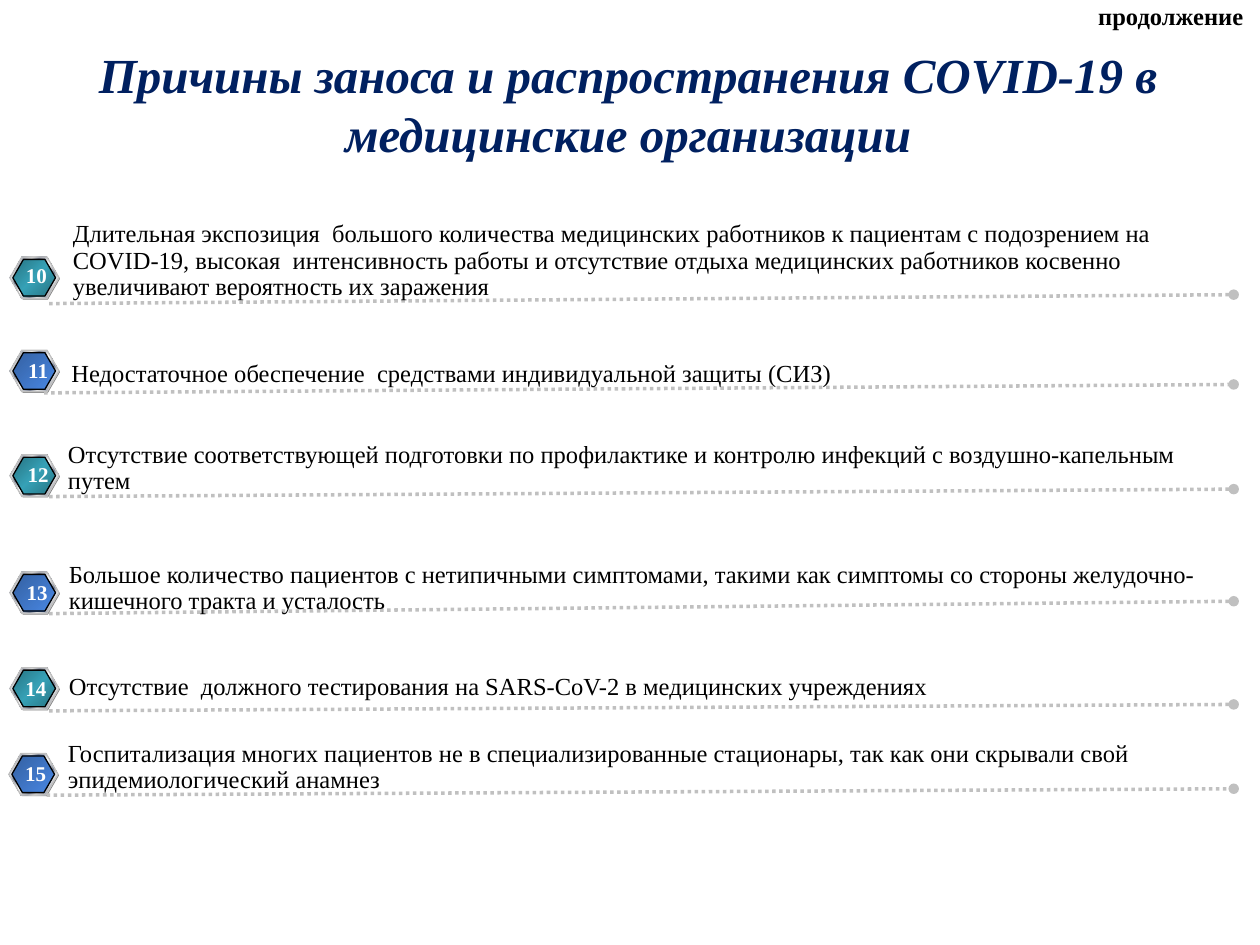
from lxml import etree
from pptx import Presentation
from pptx.dml.color import RGBColor
from pptx.enum import dml, shapes, text
from pptx.oxml import ns
from pptx.util import Cm, Pt

NAVY = RGBColor(0x00, 0x20, 0x60)
BLACK = RGBColor(0x00, 0x00, 0x00)
WHITE = RGBColor(0xFF, 0xFF, 0xFF)
GRAY = RGBColor(0x80, 0x80, 0x80)
SILVER = RGBColor(0xC0, 0xC0, 0xC0)
PALE = RGBColor(0xE6, 0xE6, 0xE6)
STEEL = RGBColor(0x7D, 0x84, 0x96)
TEAL = RGBColor(0x27, 0x73, 0x82)
AQUA = RGBColor(0x36, 0xA1, 0xB6)
BLUE = RGBColor(0x34, 0x61, 0xA2)
SKY = RGBColor(0x49, 0x87, 0xE3)

METAL = [(0, PALE), (7, STEEL), (26, PALE), (34, STEEL), (46, PALE), (50, WHITE),
         (54, PALE), (66, STEEL), (74, PALE), (93, STEEL), (100, PALE)]
FACES = [[(0, TEAL), (50, AQUA), (100, TEAL)], [(0, BLUE), (100, SKY)]]

ROWS = [
    ((0.2, 5.18), (0.25, 5.16, 0.97), (0.99, 6.12, 5.94), (1.22, 4.34, 22.35, 1.85),
     "Длительная экспозиция  большого количества медицинских работников к пациентам с подозрением на COVID-19, высокая  интенсивность работы и отсутствие отдыха медицинских работников косвенно увеличивают вероятность их заражения"),
    ((0.2, 7.06), (0.3, 7.09, 0.94), (0.89, 7.92, 7.75), (1.19, 7.16, 23.52, 0.79),
     "Недостаточное обеспечение  средствами индивидуальной защиты (СИЗ)"),
    ((0.2, 9.17), (0.15, 9.17, 1.24), (0.99, 10.01, 9.86), (1.12, 8.79, 24.05, 1.32),
     "Отсутствие соответствующей подготовки по профилактике и контролю инфекций с воздушно-капельным путем"),
    ((0.2, 11.53), (0.1, 11.56, 1.3), (0.99, 12.37, 12.12), (1.14, 11.2, 23.77, 1.32),
     "Большое количество пациентов с нетипичными симптомами, такими как симптомы со стороны желудочно-кишечного тракта и усталость"),
    ((0.2, 13.46), (0.23, 13.49, 0.99), (0.99, 14.33, 14.2), (1.14, 13.46, 23.77, 0.79),
     "Отсутствие  должного тестирования на SARS-CoV-2 в медицинских учреждениях"),
    ((0.18, 15.19), (0.1, 15.21, 1.24), (0.94, 16.03, 15.9), (1.12, 14.81, 23.77, 1.32),
     "Госпитализация многих пациентов не в специализированные стационары, так как они скрывали свой эпидемиологический анамнез"),
]

deck = Presentation()
deck.slide_width, deck.slide_height = Cm(25.4), Cm(19.05)
slide = deck.slides.add_slide(deck.slide_layouts[6])


def write(words, spot, size, color, bold=False, align=text.PP_ALIGN.LEFT, wrap=True):
    box = slide.shapes.add_textbox(*map(Cm, spot))
    frame = box.text_frame
    frame.text = words
    frame.word_wrap = wrap
    frame.auto_size = text.MSO_AUTO_SIZE.SHAPE_TO_FIT_TEXT
    para = frame.paragraphs[0]
    para.alignment = align
    font = para.runs[0].font
    font.name, font.size, font.bold = "Times New Roman", Pt(size), bold
    font.color.rgb = color
    return box


def hexa(group, spot, stops, edge):
    shape = group.shapes.add_shape(shapes.MSO_SHAPE.HEXAGON, *map(Cm, spot))
    shape.shadow.inherit = False
    shape.adjustments[0] = 0.289
    if edge is None:
        shape.fill.solid()
        shape.fill.fore_color.rgb = GRAY
        shape.line.fill.background()
        return
    shape.fill.gradient()
    grad = shape.fill._xPr.find(ns.qn("a:gradFill"))
    bands = grad.find(ns.qn("a:gsLst"))
    for old in list(bands):
        bands.remove(old)
    for place, color in stops:
        stop = etree.SubElement(bands, ns.qn("a:gs"), pos=str(place * 1000))
        etree.SubElement(stop, ns.qn("a:srgbClr"), val=str(color))
    shape.fill.gradient_angle = 315
    shape.line.color.rgb = edge
    shape.line.width = Pt(0.75)


title = write("Причины заноса и распространения COVID-19 в медицинские организации",
              (0.61, 1.3, 24.1, 1.57), 28, NAVY, True, text.PP_ALIGN.CENTER)
title.text_frame.auto_size = text.MSO_AUTO_SIZE.NONE
title.text_frame.vertical_anchor = text.MSO_ANCHOR.MIDDLE
title.text_frame.paragraphs[0].runs[0].font.italic = True

for i, (hub, num, rule, area, words) in enumerate(ROWS):
    x, y = hub
    badge = slide.shapes.add_group_shape()
    hexa(badge, (x + 0.02, y + 0.02, 0.99, 0.84), None, None)
    hexa(badge, (x, y, 0.99, 0.84), METAL, SILVER)
    hexa(badge, (x + 0.06, y + 0.05, 0.86, 0.74), FACES[i % 2], BLACK)

    left, start, end = rule
    line = slide.shapes.add_connector(shapes.MSO_CONNECTOR.STRAIGHT,
                                      Cm(left), Cm(start), Cm(24.87), Cm(end))
    line.line.color.rgb = SILVER
    line.line.width = Pt(2)
    line.line.dash_style = dml.MSO_LINE.ROUND_DOT
    etree.SubElement(line.line._get_or_add_ln(), ns.qn("a:tailEnd"), type="oval")
    etree.SubElement(line._element.spPr, ns.qn("a:effectLst"))

    write(str(10 + i), (*num, 0.76), 12, WHITE, True, text.PP_ALIGN.CENTER, False)
    body = write(words, area, 14, BLACK)
    body.text_frame.paragraphs[0].line_spacing = Pt(15)

write("продолжение", (21.89, -0.1, 3.48, 0.86), 14, BLACK, True, wrap=False)

deck.save("out.pptx")
